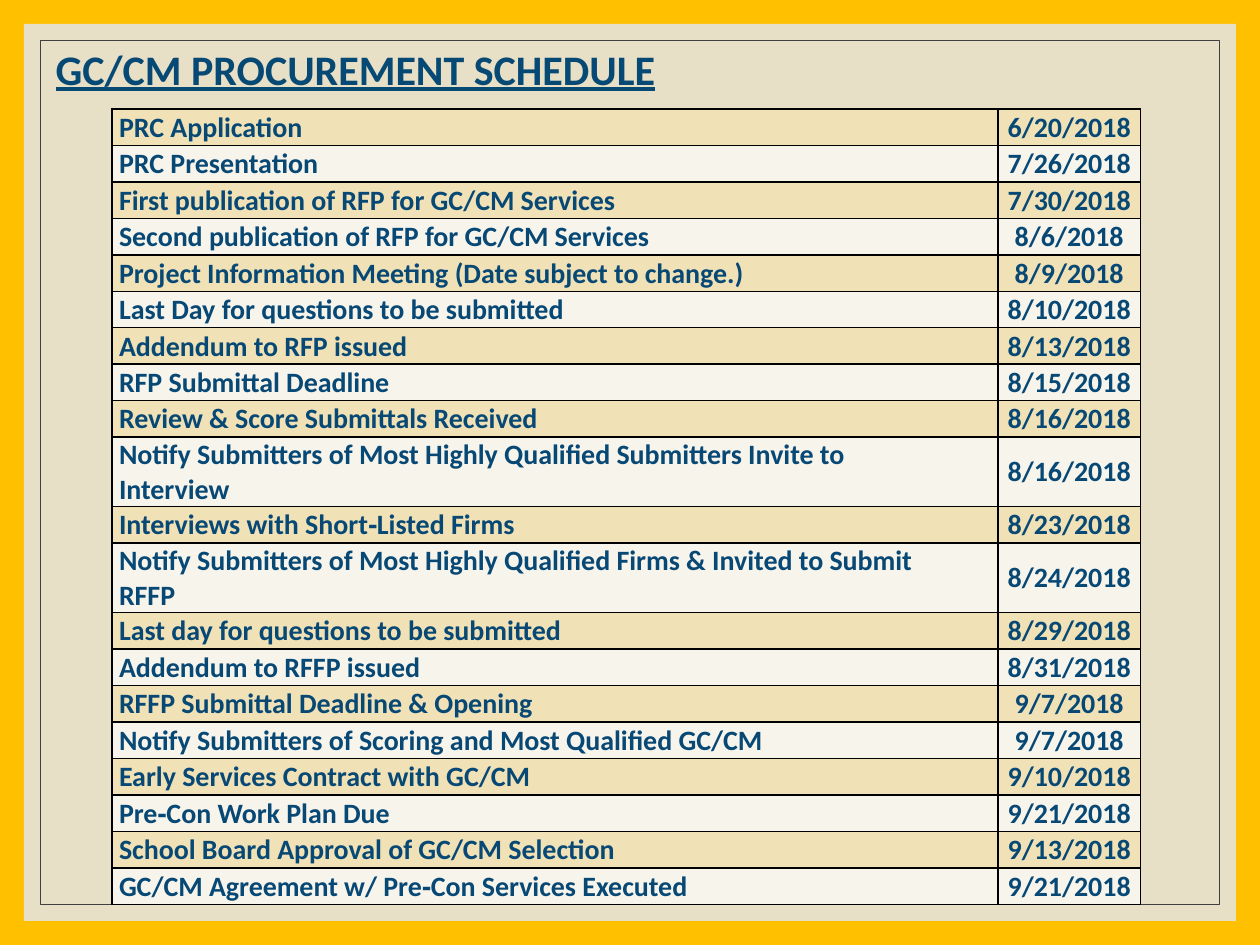
from dataclasses import dataclass
from typing import Optional

from lxml.etree import SubElement
from pptx import Presentation
from pptx.dml.color import RGBColor
from pptx.enum.shapes import MSO_SHAPE
from pptx.enum.text import MSO_ANCHOR, MSO_AUTO_SIZE, PP_ALIGN
from pptx.oxml.ns import qn
from pptx.util import Emu, Pt

PX_PER_INCH = 252
FONT = "Calibri"
COLORS = {
    "background": "FFC000",
    "panel": "E7E0C7",
    "frame": "404040",
    "title": "064974",
    "text": "074875",
    "band": "F6E2AE",
    "plain": "FFFFFF",
    "border": "000000",
}


@dataclass
class Box:
    left: int
    top: int
    width: int
    height: int


@dataclass
class Milestone:
    lines: list[str]
    date: str


MILESTONES = [
    Milestone(["PRC Application"], "6/20/2018"),
    Milestone(["PRC Presentation"], "7/26/2018"),
    Milestone(["First publication of RFP for GC/CM Services"], "7/30/2018"),
    Milestone(["Second publication of RFP for GC/CM Services"], "8/6/2018"),
    Milestone(["Project Information Meeting (Date subject to change.)"], "8/9/2018"),
    Milestone(["Last Day for questions to be submitted"], "8/10/2018"),
    Milestone(["Addendum to RFP issued"], "8/13/2018"),
    Milestone(["RFP Submittal Deadline"], "8/15/2018"),
    Milestone(["Review & Score Submittals Received"], "8/16/2018"),
    Milestone(["Notify Submitters of Most Highly Qualified Submitters Invite to",
               "Interview"], "8/16/2018"),
    Milestone(["Interviews with Short‐Listed Firms"], "8/23/2018"),
    Milestone(["Notify Submitters of Most Highly Qualified Firms & Invited to Submit",
               "RFFP"], "8/24/2018"),
    Milestone(["Last day for questions to be submitted"], "8/29/2018"),
    Milestone(["Addendum to RFFP issued"], "8/31/2018"),
    Milestone(["RFFP Submittal Deadline & Opening"], "9/7/2018"),
    Milestone(["Notify Submitters of Scoring and Most Qualified GC/CM"], "9/7/2018"),
    Milestone(["Early Services Contract with GC/CM"], "9/10/2018"),
    Milestone(["Pre‐Con Work Plan Due"], "9/21/2018"),
    Milestone(["School Board Approval of GC/CM Selection"], "9/13/2018"),
    Milestone(["GC/CM Agreement w/ Pre‐Con Services Executed"], "9/21/2018"),
]
ROW_HEIGHTS = {1: 73, 2: 137}  # by number of text lines
COLUMN_WIDTHS = [1772, 285]
TABLE_LEFT, TABLE_TOP = 224, 218


def px(n: int) -> Emu:
    return Emu(round(n * 914400 / PX_PER_INCH))


def rgb(name: str) -> RGBColor:
    return RGBColor.from_string(COLORS[name])


def place(box: Box) -> tuple[Emu, Emu, Emu, Emu]:
    return px(box.left), px(box.top), px(box.width), px(box.height)


def style_font(font, size: int, color: str) -> None:
    font.name = FONT
    font.size = Pt(size)
    font.bold = True
    font.color.rgb = rgb(color)


def add_rect(s, box: Box, fill: Optional[str] = None, line: Optional[str] = None) -> None:
    sp = s.shapes.add_shape(MSO_SHAPE.RECTANGLE, *place(box))
    sp.shadow.inherit = False
    if fill:
        sp.fill.solid()
        sp.fill.fore_color.rgb = rgb(fill)
    else:
        sp.fill.background()
    if line:
        sp.line.color.rgb = rgb(line)
        sp.line.width = Pt(0.5)
    else:
        sp.line.fill.background()


def format_title(s, text: str, box: Box) -> None:
    sp = s.shapes.title
    sp.left, sp.top, sp.width, sp.height = place(box)
    tf = sp.text_frame
    tf.text = text
    tf.auto_size = MSO_AUTO_SIZE.NONE
    tf.vertical_anchor = MSO_ANCHOR.MIDDLE
    p = tf.paragraphs[0]
    p.alignment = PP_ALIGN.LEFT
    p.line_spacing = 0.9
    style_font(p.font, 24, "title")
    p.font.underline = True
    # Bring the title in front of the panel
    sp.element.getparent().append(sp.element)


def add_borders(cell) -> None:
    props = cell._tc.get_or_add_tcPr()
    for i, side in enumerate(("lnL", "lnR", "lnT", "lnB")):
        ln = props.makeelement(qn(f"a:{side}"), {"w": str(Pt(1))})
        fill = SubElement(ln, qn("a:solidFill"))
        SubElement(fill, qn("a:srgbClr"), val=COLORS["border"])
        props.insert(i, ln)  # borders come before the fill


def fill_cell(cell, lines: list[str], color: str, align: PP_ALIGN, indent: int) -> None:
    cell.margin_left = px(indent)
    cell.margin_right = cell.margin_top = px(2)
    cell.margin_bottom = 0
    cell.vertical_anchor = MSO_ANCHOR.MIDDLE
    cell.fill.solid()
    cell.fill.fore_color.rgb = rgb(color)
    for clr in cell._tc.tcPr.iter(qn("a:srgbClr")):
        SubElement(clr, qn("a:alpha"), val="67000")
    add_borders(cell)
    cell.text_frame.text = "\n".join(lines)
    for p in cell.text_frame.paragraphs:
        p.alignment = align
        style_font(p.font, 16, "text")


def add_schedule(s, milestones: list[Milestone]) -> None:
    heights = [ROW_HEIGHTS[len(m.lines)] for m in milestones]
    box = Box(TABLE_LEFT, TABLE_TOP, sum(COLUMN_WIDTHS), sum(heights))
    table = s.shapes.add_table(len(milestones), len(COLUMN_WIDTHS), *place(box)).table
    table.first_row = table.horz_banding = False
    for column, width in zip(table.columns, COLUMN_WIDTHS):
        column.width = px(width)
    for i, (m, height) in enumerate(zip(milestones, heights)):
        table.rows[i].height = px(height)
        color = "plain" if i % 2 else "band"
        fill_cell(table.cell(i, 0), m.lines, color, PP_ALIGN.LEFT, 14)
        fill_cell(table.cell(i, 1), [m.date], color, PP_ALIGN.CENTER, 2)


def main() -> None:
    prs = Presentation()
    prs.slide_width, prs.slide_height = px(2520), px(1890)
    s = prs.slides.add_slide(prs.slide_layouts[5])
    s.background.fill.solid()
    s.background.fill.fore_color.rgb = rgb("background")

    # Panel and thin frame
    add_rect(s, Box(48, 48, 2424, 1794), fill="panel")
    add_rect(s, Box(81, 81, 2358, 1728), line="frame")

    # Heading and schedule
    format_title(s, "GC/CM PROCUREMENT SCHEDULE", Box(86, 66, 2003, 154))
    add_schedule(s, MILESTONES)
    prs.save("out.pptx")


if __name__ == "__main__":
    main()
